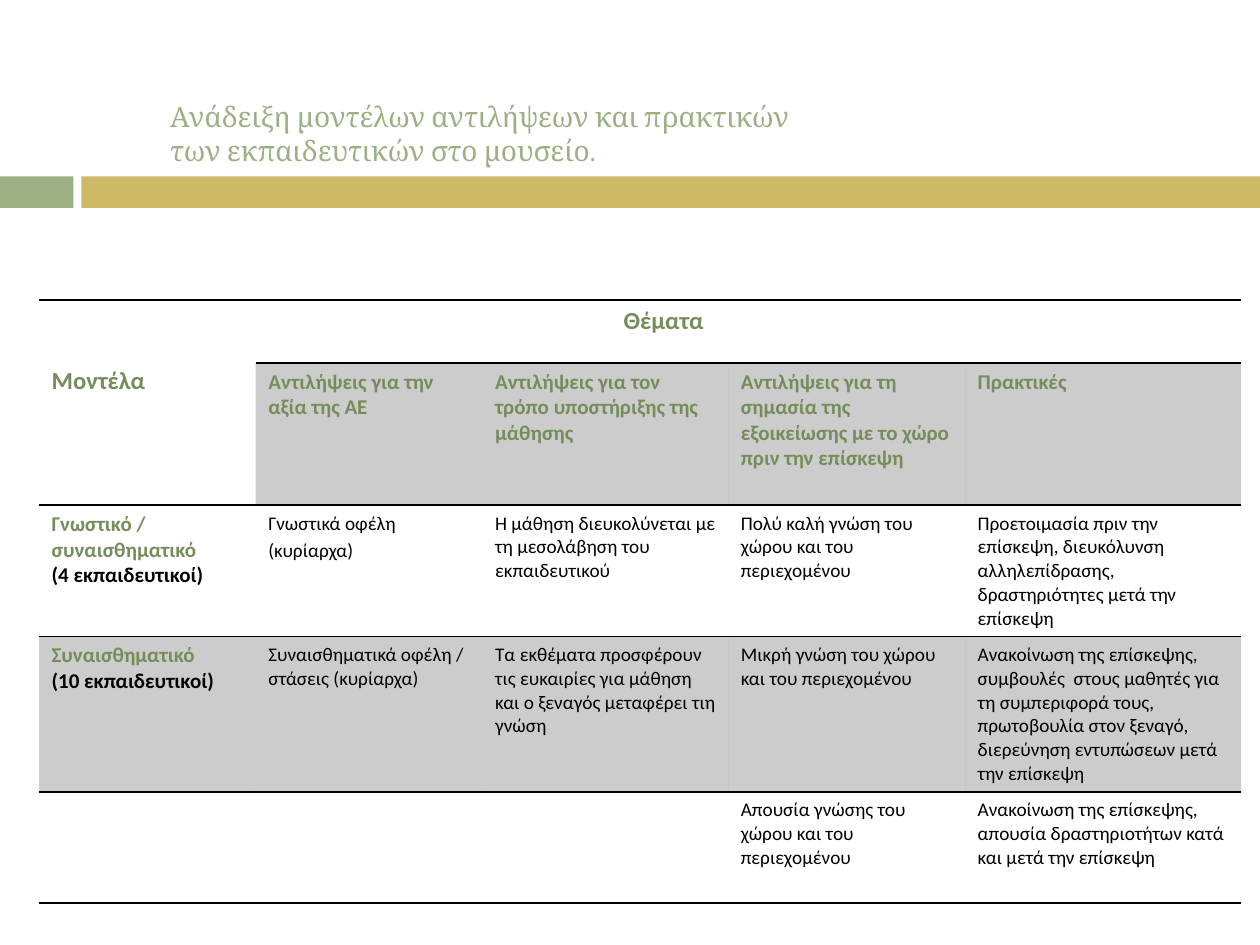
from lxml.etree import SubElement
from pptx import Presentation
from pptx.dml.color import RGBColor
from pptx.enum.shapes import MSO_SHAPE
from pptx.enum.text import MSO_ANCHOR, PP_ALIGN
from pptx.oxml.ns import qn
from pptx.util import Pt

COLORS = {
    "sage": "9CB084",
    "gold": "CEB966",
    "green": "768D5A",
    "black": "000000",
}
NO_GRID_STYLE = "{2D5ABB26-0587-4C30-8999-92F81FD0307C}"
COLUMNS = [123.84, 129.6, 140.4, 135.36, 157.68]
ROWS = [36, 81.36, 66.24, 81.36, 63.36]
RULES = {0: ("lnT", "lnB"), 1: ("lnT", "lnB"), 2: ("lnT", "lnB"),
         3: ("lnT",), 4: ("lnB",)}
SHADED_ROW = 3
HEADINGS = [
    "Αντιλήψεις για την αξία της ΑΕ",
    "Αντιλήψεις για τον τρόπο υποστήριξης της μάθησης",
    "Αντιλήψεις για τη σημασία της εξοικείωσης με το χώρο πριν την επίσκεψη",
    "Πρακτικές",
]
MODELS = [
    (["Γνωστικό / συναισθηματικό", "(4 εκπαιδευτικοί)"], [
        ["Γνωστικά οφέλη", "(κυρίαρχα)"],
        ["Η μάθηση διευκολύνεται με τη μεσολάβηση του εκπαιδευτικού"],
        ["Πολύ καλή γνώση του χώρου και του περιεχομένου"],
        ["Προετοιμασία πριν την επίσκεψη, διευκόλυνση αλληλεπίδρασης, "
         "δραστηριότητες μετά την επίσκεψη"],
    ]),
    (["Συναισθηματικό", "(10 εκπαιδευτικοί)"], [
        ["Συναισθηματικά οφέλη / στάσεις (κυρίαρχα)"],
        ["Τα εκθέματα προσφέρουν τις ευκαιρίες για μάθηση και ο ξεναγός "
         "μεταφέρει τιη γνώση"],
        ["Μικρή γνώση του χώρου και του περιεχομένου"],
        ["Ανακοίνωση της επίσκεψης, συμβουλές  στους μαθητές για τη "
         "συμπεριφορά τους, πρωτοβουλία στον ξεναγό, διερεύνηση εντυπώσεων "
         "μετά την επίσκεψη"],
    ]),
    ([], [
        [],
        [],
        ["Απουσία γνώσης του χώρου και του περιεχομένου"],
        ["Ανακοίνωση της επίσκεψης, απουσία δραστηριοτήτων κατά και μετά "
         "την επίσκεψη"],
    ]),
]


class Deck:
    def __init__(self, prs):
        self.slide = prs.slides.add_slide(prs.slide_layouts[5])

    def add_text(self, p, text, size, color, bold=False, font="Calibri"):
        r = p.add_run()
        r.text = text
        r.font.size = Pt(size)
        r.font.bold = bold
        r.font.name = font
        r.font.color.rgb = RGBColor.from_string(COLORS[color])

    def title(self, lines, left, top, width, height):
        sp = self.slide.shapes.title
        sp.left, sp.top, sp.width, sp.height = map(Pt, (left, top, width, height))
        tf = sp.text_frame
        tf.word_wrap = True
        tf.vertical_anchor = MSO_ANCHOR.MIDDLE
        p = tf.paragraphs[0]
        p.alignment = PP_ALIGN.LEFT
        for i, line in enumerate(lines):
            if i:
                p.add_line_break()
            self.add_text(p, line, 16, "sage", font="Cambria")

    def bar(self, color, left, top, width, height):
        sp = self.slide.shapes.add_shape(
            MSO_SHAPE.RECTANGLE, *map(Pt, (left, top, width, height)))
        sp.shadow.inherit = False
        sp.fill.solid()
        sp.fill.fore_color.rgb = RGBColor.from_string(COLORS[color])
        sp.line.fill.background()

    def table(self, left, top, columns, rows):
        frame = self.slide.shapes.add_table(
            len(rows), len(columns),
            *map(Pt, (left, top, sum(columns), sum(rows))))
        table = frame.table
        table.first_row = table.horz_banding = False
        table._tbl.tblPr.find(qn("a:tableStyleId")).text = NO_GRID_STYLE
        for column, width in zip(table.columns, columns):
            column.width = Pt(width)
        for row, height in zip(table.rows, rows):
            row.height = Pt(height)
        return table

    def rule(self, cell, side):
        tcPr = cell._tc.get_or_add_tcPr()
        ln = SubElement(tcPr, qn(f"a:{side}"), w=str(Pt(1)))
        fill = SubElement(ln, qn("a:solidFill"))
        SubElement(fill, qn("a:srgbClr"), val=COLORS["black"])

    def shade(self, cell, shaded):
        if not shaded:
            cell.fill.background()
            return
        cell.fill.solid()
        cell.fill.fore_color.rgb = RGBColor.from_string(COLORS["black"])
        color = cell._tc.tcPr.find(qn("a:solidFill")).find(qn("a:srgbClr"))
        SubElement(color, qn("a:alpha"), val="20000")

    def cell_text(self, cell, lines, size, colors, bold=False, gap=0):
        tf = cell.text_frame
        for i, (line, color) in enumerate(zip(lines, colors)):
            p = tf.add_paragraph() if i else tf.paragraphs[0]
            if i:
                p.space_before = Pt(gap)
            self.add_text(p, line, size, color, bold)


def main():
    prs = Presentation()
    prs.slide_width, prs.slide_height = Pt(720), Pt(540)
    deck = Deck(prs)
    deck.bar("sage", 0, 100.8, 42, 18)
    deck.bar("gold", 46.5, 100.8, 673.5, 18)
    deck.title(["Ανάδειξη μοντέλων αντιλήψεων και πρακτικών ",
                "των εκπαιδευτικών στο μουσείο."], 90, 39.6, 604.8, 73.44)

    table = deck.table(22.32, 171.36, COLUMNS, ROWS)
    for i in range(len(ROWS)):
        for j in range(len(COLUMNS)):
            cell = table.cell(i, j)
            for side in RULES[i]:
                if (i, j, side) not in ((0, 0, "lnB"), (1, 0, "lnT")):
                    deck.rule(cell, side)
            deck.shade(cell, i == SHADED_ROW or (i == 1 and j > 0))
    table.cell(0, 0).merge(table.cell(1, 0))
    table.cell(0, 1).merge(table.cell(0, 3))

    models = table.cell(0, 0)
    models.margin_top = Pt(37.8)
    deck.cell_text(models, ["Μοντέλα"], 14, ["green"], True)
    themes = table.cell(0, 1)
    deck.cell_text(themes, ["Θέματα"], 14, ["green"], True)
    pPr = themes.text_frame.paragraphs[0]._p.get_or_add_pPr()
    pPr.set("marL", str(Pt(203)))

    for j, heading in enumerate(HEADINGS, 1):
        deck.cell_text(table.cell(1, j), [heading], 12, ["green"], True)
    for i, (name, findings) in enumerate(MODELS, 2):
        deck.cell_text(table.cell(i, 0), name, 12, ["green", "black"], True)
        for j, lines in enumerate(findings, 1):
            deck.cell_text(table.cell(i, j), lines, 11, ["black"] * 2, gap=2.2)

    prs.save("out.pptx")


if __name__ == "__main__":
    main()
